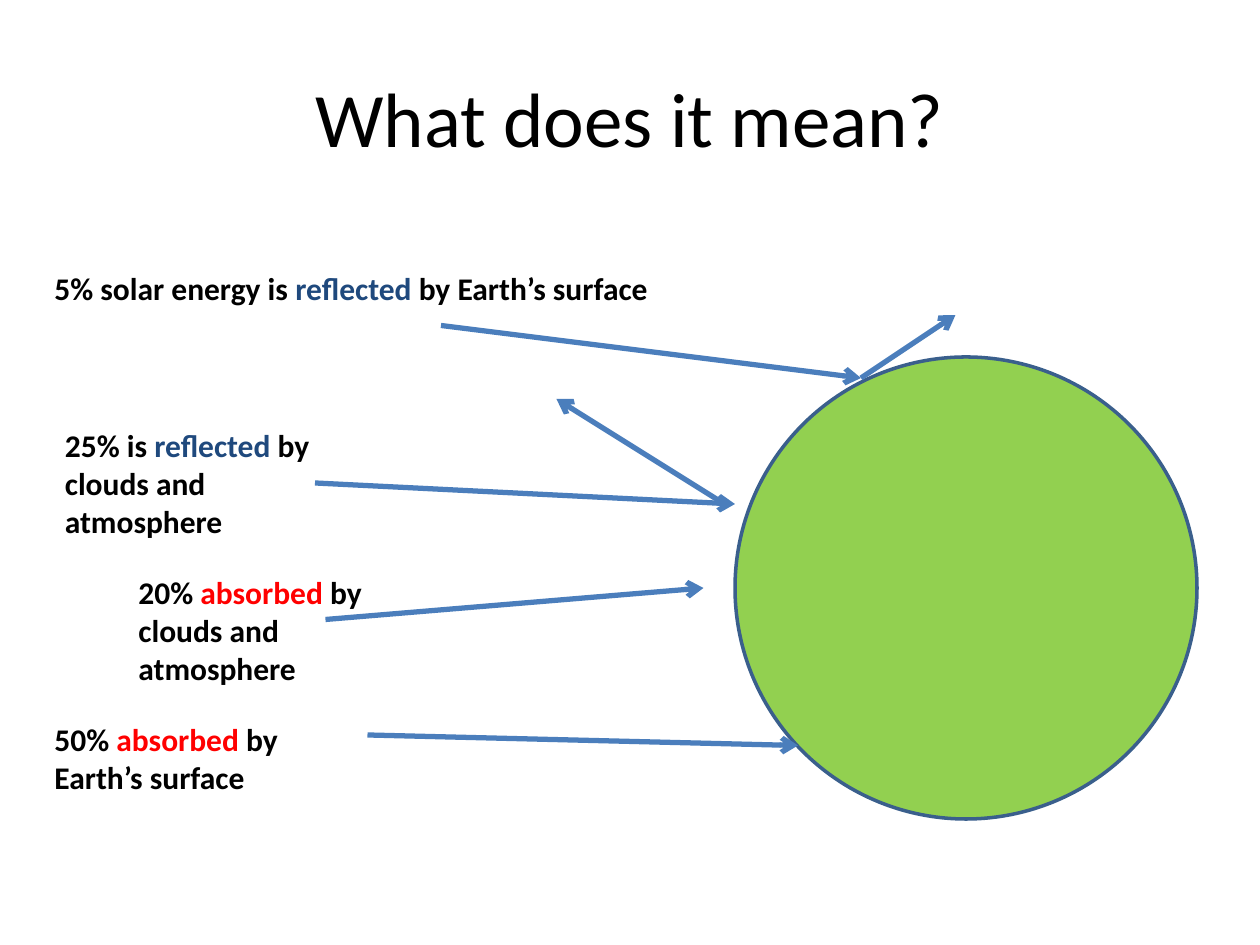
from pptx import Presentation
from pptx.dml.color import RGBColor
from pptx.enum.shapes import MSO_CONNECTOR, MSO_SHAPE
from pptx.enum.text import MSO_ANCHOR, MSO_AUTO_SIZE, PP_ALIGN
from pptx.oxml.ns import qn
from pptx.util import Pt
from lxml.etree import SubElement

COLORS = {
    "text": "000000",
    "reflected": "1F497D",
    "absorbed": "FF0000",
    "earth": "92D050",
    "outline": "3A5F8C",
    "ray": "4B7EBC",
}

RAYS = [
    [(252, 186), (492, 216), (546, 180)],
    [(180, 276), (420, 288)],
    [(414, 288), (318, 228)],
    [(186, 354), (402, 336)],
    [(210, 420), (456, 426)],
]

LABELS = [
    ((24, 150, 356, 29), False, "5% solar energy is ", "reflected", " by Earth’s surface"),
    ((30, 240, 162, 73), True, "25% is ", "reflected", " by clouds and atmosphere"),
    ((72, 324, 162, 73), True, "20% ", "absorbed", " by clouds and atmosphere"),
    ((24, 408, 168, 51), True, "50% ", "absorbed", " by Earth’s surface"),
]


def rgb(name):
    return RGBColor.from_string(COLORS[name])


def add_text(p, text, size=18, bold=False, color="text"):
    r = p.add_run()
    r.text = text
    r.font.name = "Calibri"
    r.font.size = Pt(size)
    r.font.bold = bold
    r.font.color.rgb = rgb(color)


def place_title(slide, box):
    sp = slide.shapes.title
    sp.left, sp.top, sp.width, sp.height = map(Pt, box)
    tf = sp.text_frame
    tf.vertical_anchor = MSO_ANCHOR.MIDDLE
    p = tf.paragraphs[0]
    p.alignment = PP_ALIGN.CENTER
    add_text(p, "What does it mean?", size=44)


def draw_earth(slide, box):
    sp = slide.shapes.add_shape(MSO_SHAPE.FLOWCHART_CONNECTOR, *map(Pt, box))
    sp.shadow.inherit = False
    sp.fill.solid()
    sp.fill.fore_color.rgb = rgb("earth")
    sp.line.color.rgb = rgb("outline")
    sp.line.width = Pt(2)


def draw_ray(slide, points):
    for start, end in zip(points, points[1:]):
        line = slide.shapes.add_connector(
            MSO_CONNECTOR.STRAIGHT, *map(Pt, start + end))
        line.line.color.rgb = rgb("ray")
        line.line.width = Pt(3)
        SubElement(line.line._get_or_add_ln(), qn("a:tailEnd"), type="arrow")
        SubElement(line._element.spPr, qn("a:effectLst"))


def place_label(slide, box, wrap, amount, effect, place):
    tf = slide.shapes.add_textbox(*map(Pt, box)).text_frame
    tf.word_wrap = wrap
    tf.auto_size = MSO_AUTO_SIZE.SHAPE_TO_FIT_TEXT
    p = tf.paragraphs[0]
    add_text(p, amount, bold=True)
    add_text(p, effect, bold=True, color=effect)
    add_text(p, place, bold=True)


def main():
    prs = Presentation()
    prs.slide_width, prs.slide_height = Pt(720), Pt(540)
    slide = prs.slides.add_slide(prs.slide_layouts[5])
    place_title(slide, (36, 21.6, 648, 90))
    draw_earth(slide, (420, 204, 264, 264))
    for points in RAYS:
        draw_ray(slide, points)
    for label in LABELS:
        place_label(slide, *label)
    prs.save("out.pptx")


if __name__ == "__main__":
    main()
